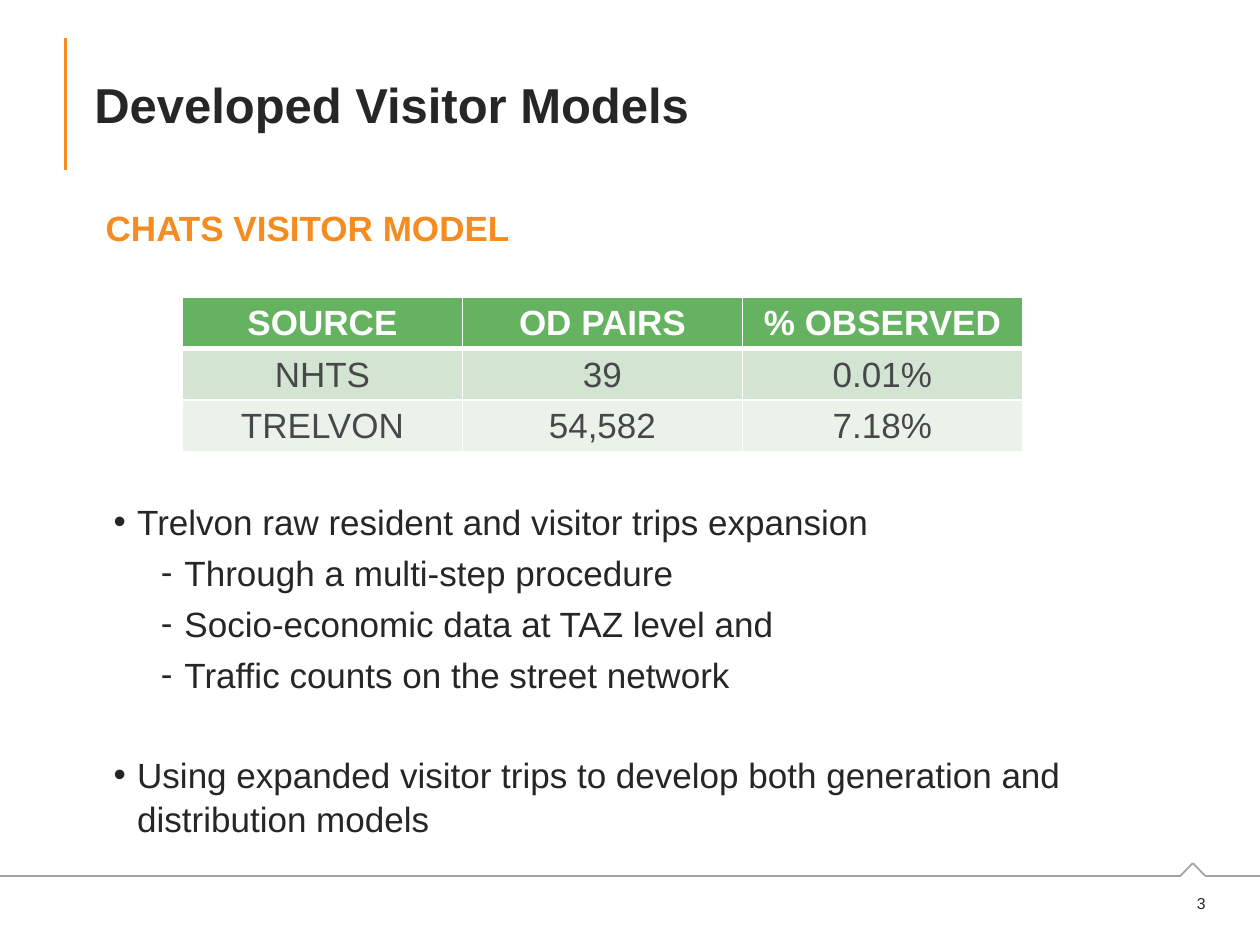
import itertools

import pptx
import pptx.dml.color
import pptx.enum.shapes
import pptx.enum.text
import pptx.oxml.ns
import pptx.util
from lxml import etree

Pt = pptx.util.Pt
ALIGN = pptx.enum.text.PP_ALIGN
ANCHOR = pptx.enum.text.MSO_ANCHOR
COLORS = {
    "accent": "F68B1F",
    "rule": "A3A3A5",
    "text": "262626",
    "cell_text": "48484A",
    "header": "65B360",
    "band_dark": "D3E5D2",
    "band_light": "EAF2EA",
    "white": "FFFFFF",
}
FONT = "Arial"
LINE_SPACING = 1.05
INDENTS = {1: 18, 2: 45}
HANGING = 13.5


def rgb(name):
    """Return the palette colour with this name."""
    return pptx.dml.color.RGBColor.from_string(COLORS[name])


def add_element(parent, tag, **attributes):
    """Append a DrawingML element and return it."""
    return etree.SubElement(parent, pptx.oxml.ns.qn(tag), attributes)


def write_text(paragraph, text, size=20, color="text", bold=False, align=ALIGN.LEFT,
               before=0, spacing=1.0, level=0, bullet=None):
    """Fill a paragraph with formatted text."""
    paragraph.alignment = align
    paragraph.space_before = Pt(before)
    paragraph.line_spacing = spacing
    if bullet:
        properties = paragraph._p.get_or_add_pPr()
        properties.set("marL", str(Pt(INDENTS[level])))
        properties.set("indent", str(-Pt(HANGING)))
        add_element(properties, "a:buFont", typeface=FONT)
        add_element(properties, "a:buChar", char=bullet)
        paragraph.level = level
    run = paragraph.add_run()
    run.text = text
    run.font.name = FONT
    run.font.size = Pt(size)
    run.font.bold = bold
    run.font.color.rgb = rgb(color)


def add_box(slide, left, top, width, height, anchor=ANCHOR.TOP):
    """Add a wrapping text box and return its text frame."""
    shape = slide.shapes.add_textbox(Pt(left), Pt(top), Pt(width), Pt(height))
    frame = shape.text_frame
    frame.word_wrap = True
    frame.vertical_anchor = anchor
    return frame


def add_line(slide, start, end, color, width):
    """Draw a straight line without a shadow."""
    connector = slide.shapes.add_connector(
        pptx.enum.shapes.MSO_CONNECTOR.STRAIGHT, *map(Pt, start + end))
    connector.line.color.rgb = rgb(color)
    connector.line.width = Pt(width)
    add_element(connector._element.spPr, "a:effectLst")


def add_title(slide, left, top, width, height):
    """Place the title beside its accent rule."""
    add_line(slide, (left, top), (left, top + height), "accent", 1.5)
    frame = add_box(slide, left + 9.4, top, width - 9.4, height, ANCHOR.MIDDLE)
    write_text(frame.paragraphs[0], "Developed Visitor Models", size=28, bold=True)


def add_footer(slide, left, top, width, height):
    """Place the notched rule and the page number."""
    base = top + 7.2
    right = left + width
    points = [(left, base), (right - 45.4, base), (right - 38.4, top),
              (right - 31.4, base), (right, base)]
    for start, end in itertools.pairwise(points):
        add_line(slide, start, end, "rule", 1)
    frame = add_box(slide, right - 54, base + 6.5, 30, height - 13.7, ANCHOR.MIDDLE)
    write_text(frame.paragraphs[0], "3", size=9, align=ALIGN.RIGHT)


def add_borders(cell, top, bottom):
    """Give a cell white borders with the given top and bottom widths."""
    properties = cell._tc.get_or_add_tcPr()
    for side, width in (("L", 1), ("R", 1), ("T", top), ("B", bottom)):
        line = add_element(properties, f"a:ln{side}", w=str(Pt(width)))
        fill = add_element(line, "a:solidFill")
        add_element(fill, "a:srgbClr", val=COLORS["white"])


def add_source_table(slide, left, top, width, height):
    """Place the table that compares the data sources."""
    rows = [
        ("SOURCE", "OD PAIRS", "% OBSERVED"),
        ("NHTS", "39", "0.01%"),
        ("TRELVON", "54,582", "7.18%"),
    ]
    fills = ["header", "band_dark", "band_light"]
    rule_widths = [1, 3, 1, 1]
    table = slide.shapes.add_table(
        len(rows), len(rows[0]), Pt(left), Pt(top), Pt(width), Pt(height)).table
    table.horz_banding = False
    for row_index, row in enumerate(rows):
        header = row_index == 0
        for column_index, text in enumerate(row):
            cell = table.cell(row_index, column_index)
            cell.margin_left = cell.margin_right = cell.margin_top = Pt(0.7)
            cell.margin_bottom = Pt(0)
            cell.vertical_anchor = ANCHOR.MIDDLE
            add_borders(cell, *rule_widths[row_index:row_index + 2])
            cell.fill.solid()
            cell.fill.fore_color.rgb = rgb(fills[row_index])
            write_text(cell.text_frame.paragraphs[0], text, bold=header,
                       color="white" if header else "cell_text", align=ALIGN.CENTER)


def add_body(slide, left, top, width, height):
    """Place the heading, the table and the bullet list."""
    heading = add_box(slide, left, top, width, 32)
    write_text(heading.paragraphs[0], "CHATS VISITOR MODEL", color="accent",
               bold=True, spacing=LINE_SPACING)
    add_source_table(slide, left + 51, top + 57, 480, 88)
    items = [
        (1, 0, "Trelvon raw resident and visitor trips expansion"),
        (2, 4, "Through a multi-step procedure"),
        (2, 4, "Socio-economic data at TAZ level and"),
        (2, 4, "Traffic counts on the street network"),
        (1, 32, "Using expanded visitor trips to develop both generation and "
                "distribution models"),
    ]
    frame = add_box(slide, left, top + 168, width, height - 168)
    for index, (level, before, text) in enumerate(items):
        paragraph = frame.add_paragraph() if index else frame.paragraphs[0]
        write_text(paragraph, text, before=before, spacing=LINE_SPACING,
                   level=level, bullet="•" if level == 1 else "-")


def main():
    """Build and save the presentation."""
    presentation = pptx.Presentation()
    presentation.slide_width = Pt(720)
    presentation.slide_height = Pt(540)
    slide = presentation.slides.add_slide(presentation.slide_layouts[6])
    add_title(slide, 37.4, 21.6, 646.6, 75.6)
    add_footer(slide, 0, 493.2, 720, 31.7)
    add_body(slide, 53.3, 113, 582.5, 368)
    presentation.save("out.pptx")


if __name__ == "__main__":
    main()
